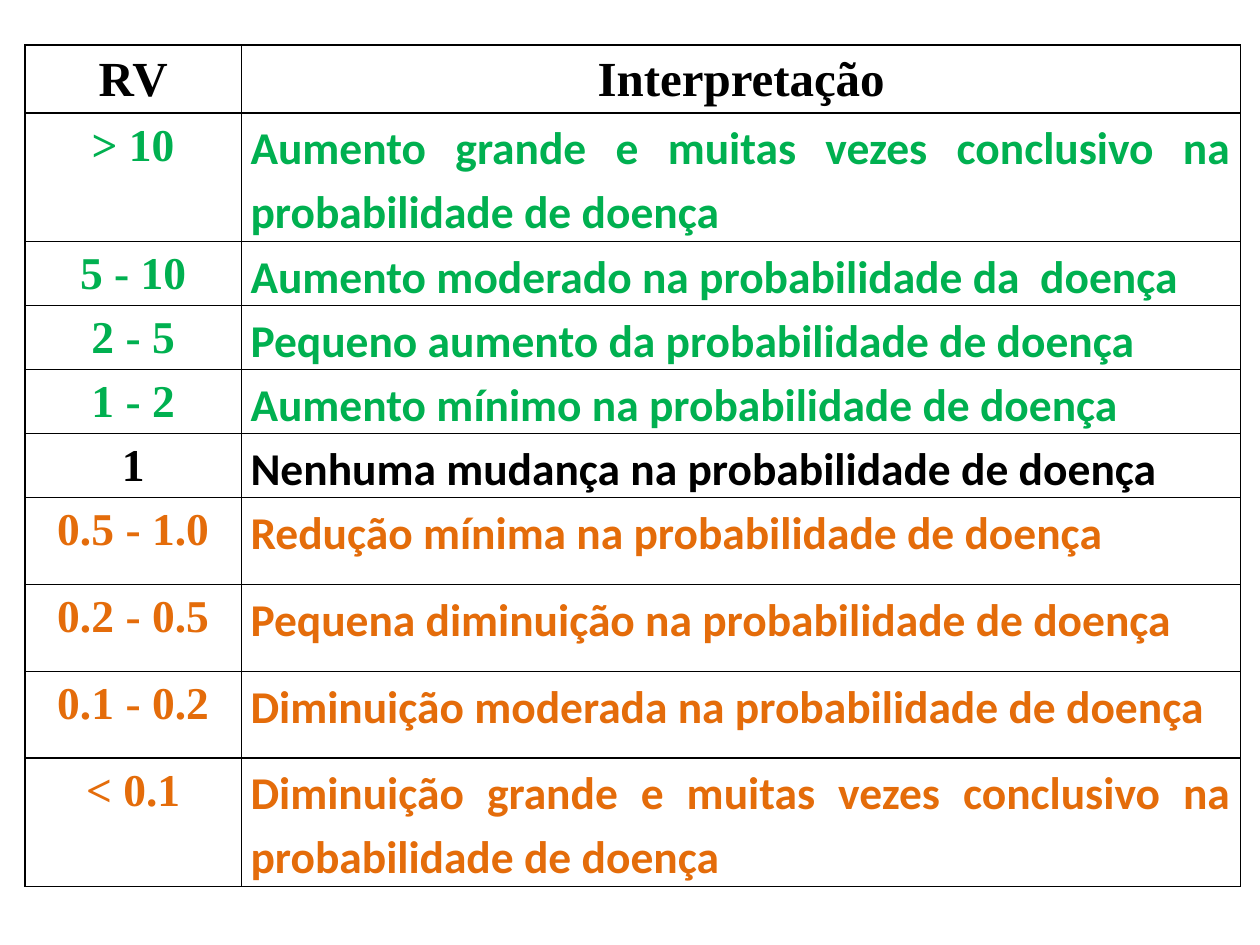
import dataclasses

import lxml.etree
import pptx
import pptx.dml.color
import pptx.enum.text
import pptx.oxml.ns
import pptx.presentation
import pptx.slide
import pptx.table
import pptx.util

Cm = pptx.util.Cm
Pt = pptx.util.Pt
RGBColor = pptx.dml.color.RGBColor
Align = pptx.enum.text.PP_ALIGN
qn = pptx.oxml.ns.qn

BLACK = RGBColor(0x00, 0x00, 0x00)
GREEN = RGBColor(0x00, 0xB0, 0x50)
ORANGE = RGBColor(0xE4, 0x6C, 0x0A)

RATIO_FONT = "Times New Roman"
MEANING_FONT = "Calibri"
COLUMN_WIDTHS = (Cm(4.37), Cm(20.14))
SINGLE, ROOMY, DOUBLE = Cm(1.27), Cm(1.75), Cm(2.59)
HEADER_HEIGHT = Cm(1.37)


@dataclasses.dataclass(frozen=True)
class LikelihoodRow:
    ratio: str
    meaning: str
    color: RGBColor
    height: pptx.util.Length


ROWS = (
    LikelihoodRow("> 10", "Aumento grande e muitas vezes conclusivo na probabilidade de doença", GREEN, DOUBLE),
    LikelihoodRow("5 - 10", "Aumento moderado na probabilidade da  doença", GREEN, SINGLE),
    LikelihoodRow("2 - 5", "Pequeno aumento da probabilidade de doença", GREEN, SINGLE),
    LikelihoodRow("1 - 2", "Aumento mínimo na probabilidade de doença", GREEN, SINGLE),
    LikelihoodRow("1", "Nenhuma mudança na probabilidade de doença", BLACK, SINGLE),
    LikelihoodRow("0.5 - 1.0", "Redução mínima na probabilidade de doença", ORANGE, ROOMY),
    LikelihoodRow("0.2 - 0.5", "Pequena diminuição na probabilidade de doença", ORANGE, ROOMY),
    LikelihoodRow("0.1 - 0.2", "Diminuição moderada na probabilidade de doença", ORANGE, ROOMY),
    LikelihoodRow("< 0.1", "Diminuição grande e muitas vezes conclusivo na probabilidade de doença", ORANGE, DOUBLE),
)


def draw_borders(cell: pptx.table._Cell) -> None:
    properties = cell._tc.get_or_add_tcPr()
    for side in ("a:lnL", "a:lnR", "a:lnT", "a:lnB"):
        line = lxml.etree.SubElement(properties, qn(side), w=str(Pt(1)))
        fill = lxml.etree.SubElement(line, qn("a:solidFill"))
        lxml.etree.SubElement(fill, qn("a:srgbClr"), val=str(BLACK))


def fill_cell(cell: pptx.table._Cell, text: str, font: str, size: int,
              color: RGBColor, alignment: Align) -> None:
    draw_borders(cell)
    cell.fill.background()
    cell.margin_left = cell.margin_right = Cm(0.18)
    cell.margin_top = cell.margin_bottom = 0
    paragraph = cell.text_frame.paragraphs[0]
    paragraph.alignment = alignment
    paragraph.line_spacing = 1.15
    run = paragraph.add_run()
    run.text = text
    run.font.name = font
    run.font.size = Pt(size)
    run.font.bold = True
    run.font.color.rgb = color


def draw_likelihood_table(slide: pptx.slide.Slide) -> None:
    heights = [HEADER_HEIGHT] + [row.height for row in ROWS]
    table = slide.shapes.add_table(
        len(heights), len(COLUMN_WIDTHS), Cm(0.5), Cm(0.91),
        sum(COLUMN_WIDTHS), sum(heights)).table
    for column, width in zip(table.columns, COLUMN_WIDTHS):
        column.width = width
    for table_row, height in zip(table.rows, heights):
        table_row.height = height

    # Header
    for index, heading in enumerate(("RV", "Interpretação")):
        fill_cell(table.cell(0, index), heading, RATIO_FONT, 28, BLACK, Align.CENTER)

    # Likelihood ratios and their meaning
    for index, row in enumerate(ROWS, start=1):
        fill_cell(table.cell(index, 0), row.ratio, RATIO_FONT, 26, row.color, Align.CENTER)
        fill_cell(table.cell(index, 1), row.meaning, MEANING_FONT, 26, row.color, Align.JUSTIFY)


def main() -> None:
    presentation = pptx.Presentation()
    presentation.slide_width = Cm(25.4)
    presentation.slide_height = Cm(19.05)
    slide = presentation.slides.add_slide(presentation.slide_layouts[6])
    draw_likelihood_table(slide)
    presentation.save("out.pptx")


if __name__ == "__main__":
    main()
